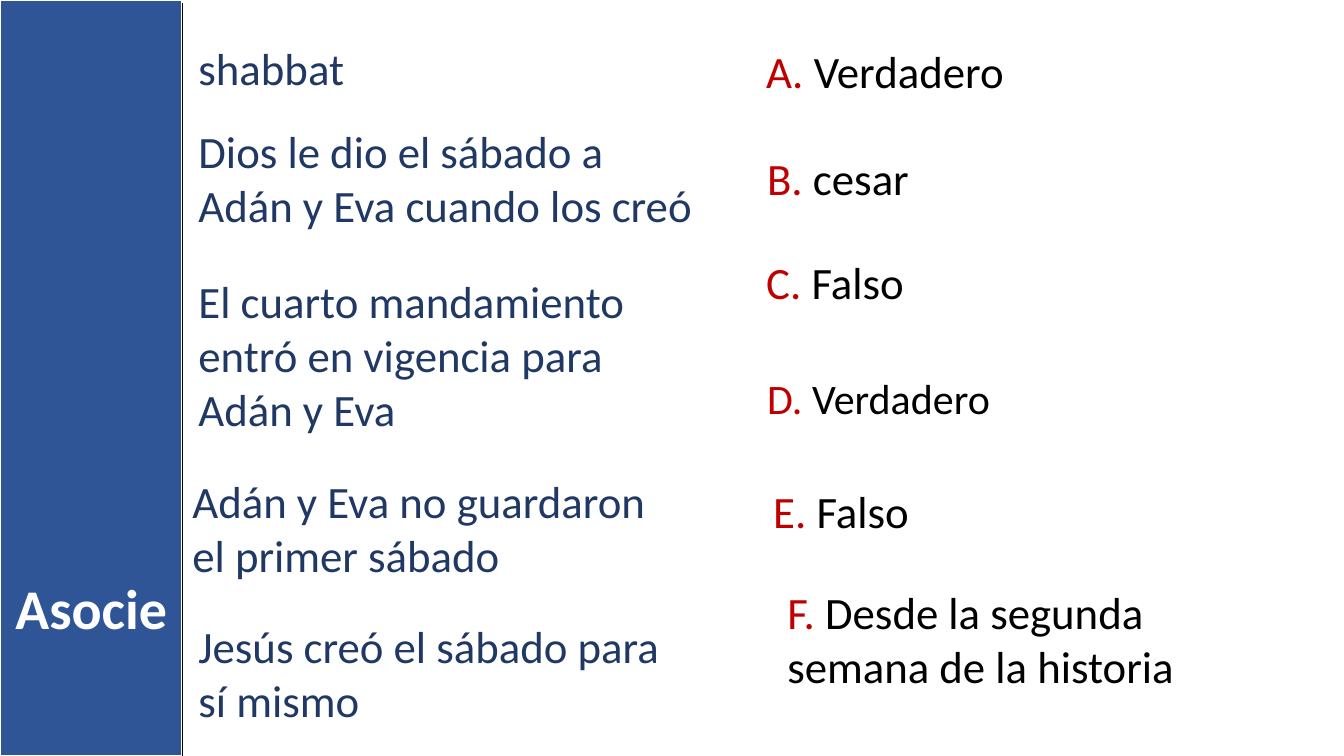
from dataclasses import dataclass

from lxml import etree
from pptx import Presentation
from pptx import util as u
from pptx.dml.color import RGBColor
from pptx.enum import shapes, text
from pptx.oxml.ns import qn

PX = 9144  # one px is a hundredth of an inch
WIDTH, HEIGHT = 1333, 750
BAND_WIDTH = 181


@dataclass(frozen=True)
class Theme:
    font: str = "Calibri"
    band: RGBColor = RGBColor(0x2F, 0x55, 0x97)
    statement: RGBColor = RGBColor(0x20, 0x38, 0x64)
    letter: RGBColor = RGBColor(0xC0, 0x00, 0x00)
    dark: RGBColor = RGBColor(0x00, 0x00, 0x00)
    light: RGBColor = RGBColor(0xFF, 0xFF, 0xFF)
    title_size: int = 40
    text_size: int = 32
    small_size: int = 30


THEME = Theme()

# Offsets are relative to the column box: left, top, width, height
STATEMENTS = [
    ("shabbat", (6, 36, 510, 64)),
    ("Dios le dio el sábado a Adán y Eva cuando los creó", (6, 118, 510, 118)),
    ("El cuarto mandamiento entró en vigencia para Adán y Eva", (6, 267, 510, 172)),
    ("Adán y Eva no guardaron el primer sábado", (0, 465, 494, 118)),
    ("Jesús creó el sábado para sí mismo", (6, 609, 494, 118)),
]
ANSWERS = [
    ("Verdadero", (0, 38, 504, 64), THEME.text_size),
    ("cesar", (1, 145, 529, 64), THEME.text_size),
    ("Falso", (0, 248, 488, 64), THEME.text_size),
    ("Verdadero", (1, 365, 529, 61), THEME.small_size),
    ("Falso", (7, 475, 518, 64), THEME.text_size),
    ("Desde la segunda semana de la historia", (21, 575, 415, 118), THEME.text_size),
]


def emu(*lengths):
    return [u.Emu(length * PX) for length in lengths]


def add_text(slide, box, runs, size):
    """Add a text box holding one paragraph of (words, colour) runs."""
    frame = slide.shapes.add_textbox(*emu(*box)).text_frame
    frame.word_wrap = True
    paragraph = frame.paragraphs[0]
    paragraph.font.name = THEME.font
    paragraph.font.size = u.Pt(size)
    for words, colour in runs:
        run = paragraph.add_run()
        run.text = words
        run.font.color.rgb = colour


def add_band(slide, box):
    """Draw the side band with its title and right edge."""
    left, top, width, height = box
    band = slide.shapes.add_shape(shapes.MSO_SHAPE.RECTANGLE, *emu(*box))
    band.shadow.inherit = False
    band.fill.solid()
    band.fill.fore_color.rgb = THEME.band
    band.line.color.rgb = THEME.light
    band.line.width = u.Pt(1.5)

    # Title, brought in front of the band
    title = slide.shapes.title
    title.left, title.top, title.width, title.height = emu(left, top + 564, width, 77)
    band.element.addnext(title.element)
    frame = title.text_frame
    frame.text = "Asocie"
    frame.word_wrap = True
    frame.auto_size = text.MSO_AUTO_SIZE.NONE
    frame.vertical_anchor = text.MSO_ANCHOR.TOP
    paragraph = frame.paragraphs[0]
    paragraph.alignment = text.PP_ALIGN.CENTER
    paragraph.font.name = THEME.font
    paragraph.font.size = u.Pt(THEME.title_size)
    paragraph.font.bold = True
    paragraph.font.color.rgb = THEME.light

    # Right edge
    right = left + width
    edge = slide.shapes.add_connector(
        shapes.MSO_CONNECTOR.STRAIGHT, *emu(right, top + 3, right, top + height))
    edge.line.color.rgb = THEME.dark
    edge.line.width = u.Pt(1)
    etree.SubElement(edge.element.spPr, qn("a:effectLst"))


def add_statements(slide, left, top):
    for words, (x, y, width, height) in STATEMENTS:
        add_text(slide, (left + x, top + y, width, height),
                 [(words, THEME.statement)], THEME.text_size)


def add_answers(slide, left, top):
    for letter, (words, (x, y, width, height), size) in zip("ABCDEF", ANSWERS):
        add_text(slide, (left + x, top + y, width, height),
                 [(f"{letter}. ", THEME.letter), (words, THEME.dark)], size)


def main():
    presentation = Presentation()
    presentation.slide_width, presentation.slide_height = emu(WIDTH, HEIGHT)
    title_only = presentation.slide_layouts[5]
    slide = presentation.slides.add_slide(title_only)
    add_band(slide, (0, 0, BAND_WIDTH, HEIGHT))
    add_statements(slide, BAND_WIDTH, 0)
    add_answers(slide, 750, 0)
    presentation.save("out.pptx")


if __name__ == "__main__":
    main()
